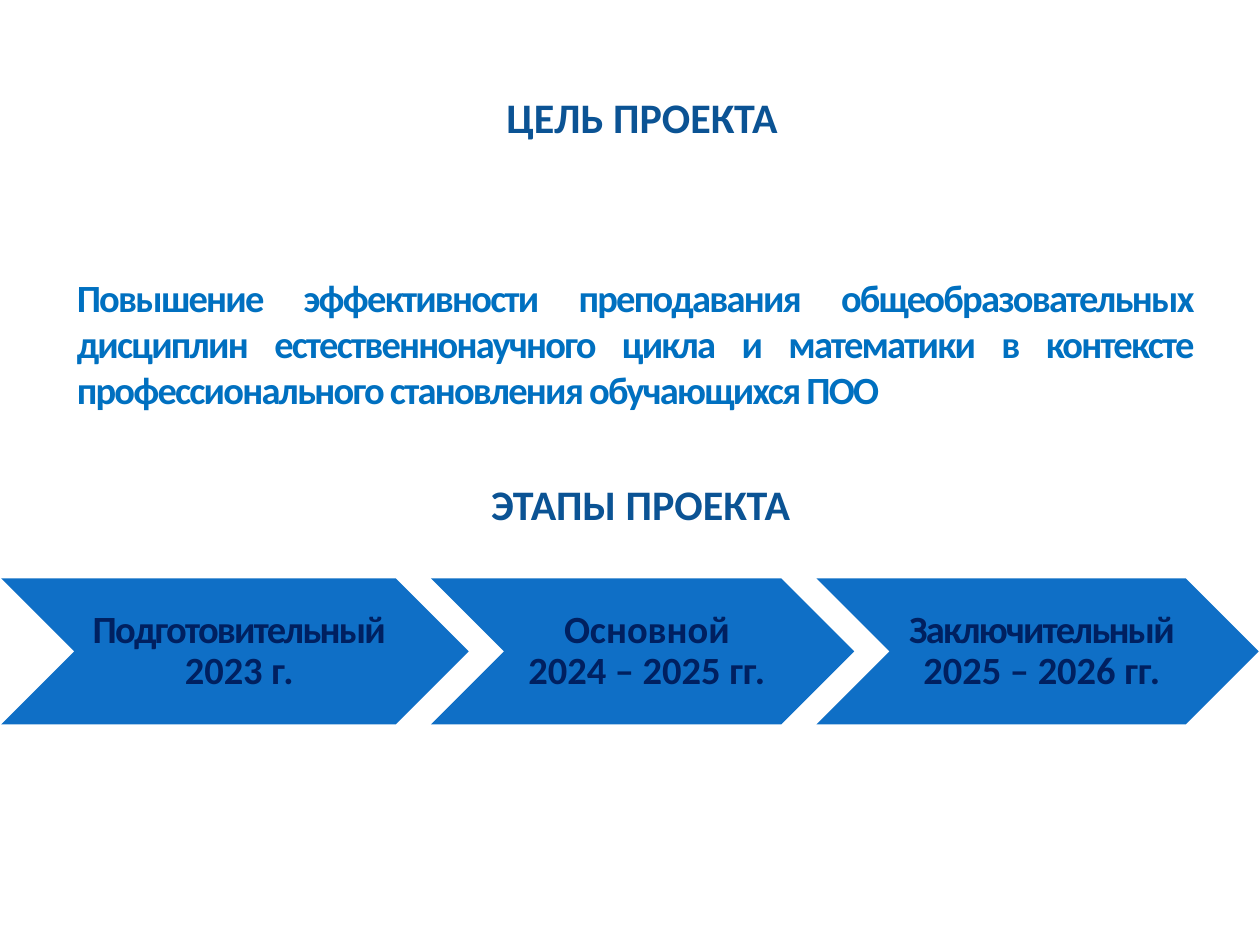
from dataclasses import dataclass

from pptx import Presentation
from pptx.dml.color import RGBColor
from pptx.enum.shapes import MSO_SHAPE
from pptx.enum.text import MSO_ANCHOR, MSO_AUTO_SIZE, PP_ALIGN
from pptx.util import Inches, Pt

CHEVRON = MSO_SHAPE.CHEVRON
MIDDLE = MSO_ANCHOR.MIDDLE
NO_FIT = MSO_AUTO_SIZE.NONE
CENTER, JUSTIFY = PP_ALIGN.CENTER, PP_ALIGN.JUSTIFY

HEADING_BLUE = RGBColor(0x0B, 0x53, 0x94)
GOAL_BLUE = RGBColor(0x00, 0x70, 0xC0)
STAGE_BLUE = RGBColor(0x0F, 0x6F, 0xC6)
NAVY = RGBColor(0x00, 0x20, 0x60)

FONT = "Calibri"
TIGHT = -100  # character spacing, hundredths of a point
STAGE_LEFT, STAGE_TOP, STAGE_HEIGHT = 0.01, 4.59, 1.16
STAGE_OVERLAP = 0.3


@dataclass
class Heading:
    text: str
    left: float
    top: float
    width: float


@dataclass
class Stage:
    name: str
    years: str
    width: float
    spacing: int = 0


HEADINGS = [
    Heading("ЦЕЛЬ ПРОЕКТА", 3.82, 0.68, 2.55),
    Heading("ЭТАПЫ ПРОЕКТА", 3.47, 3.75, 3.23),
]
STAGES = [
    Stage("Подготовительный", "2023 г.", 3.71, TIGHT),
    Stage("Основной", "2024 – 2025 гг.", 3.36),
    Stage("Заключительный", "2025 – 2026 гг.", 3.51, TIGHT),
]
GOAL = (
    "Повышение эффективности преподавания общеобразовательных дисциплин "
    "естественнонаучного цикла и математики в контексте "
    "профессионального становления обучающихся ПОО"
)


def add_run(paragraph, text: str, size: int, color: RGBColor, spacing: int = 0) -> None:
    run = paragraph.add_run()
    run.text = text
    run.font.name = FONT
    run.font.size = Pt(size)
    run.font.bold = True
    run.font.color.rgb = color
    if spacing:
        run.font._element.set("spc", str(spacing))


def add_heading(slide, heading: Heading) -> None:
    box = slide.shapes.add_textbox(
        Inches(heading.left), Inches(heading.top), Inches(heading.width), Inches(0.5))
    box.text_frame.word_wrap = True
    paragraph = box.text_frame.paragraphs[0]
    paragraph.alignment = CENTER
    add_run(paragraph, heading.text, 24, HEADING_BLUE)


def add_stage(slide, stage: Stage, left: float) -> None:
    arrow = slide.shapes.add_shape(
        CHEVRON, Inches(left), Inches(STAGE_TOP), Inches(stage.width), Inches(STAGE_HEIGHT))
    arrow.shadow.inherit = False
    arrow.fill.solid()
    arrow.fill.fore_color.rgb = STAGE_BLUE
    arrow.line.fill.background()

    frame = arrow.text_frame
    frame.word_wrap = True
    frame.vertical_anchor = MIDDLE
    frame.margin_left = Inches(0.1)
    frame.margin_top = frame.margin_right = frame.margin_bottom = Inches(0.03)
    paragraph = frame.paragraphs[0]
    paragraph.alignment = CENTER
    paragraph.line_spacing = 0.9
    add_run(paragraph, stage.name, 22, NAVY, stage.spacing)
    paragraph.add_line_break()
    add_run(paragraph, stage.years, 22, NAVY)


def main() -> None:
    deck = Presentation()
    deck.slide_width, deck.slide_height = Inches(10), Inches(7.5)
    slide = deck.slides.add_slide(deck.slide_layouts[5])

    # Project goal in the title placeholder
    goal = slide.shapes.title
    goal.left, goal.top = Inches(0.51), Inches(2.12)
    goal.width, goal.height = Inches(9.06), Inches(1.21)
    goal.text_frame.word_wrap = True
    goal.text_frame.auto_size = NO_FIT
    goal.text_frame.vertical_anchor = MIDDLE
    paragraph = goal.text_frame.paragraphs[0]
    paragraph.alignment = JUSTIFY
    add_run(paragraph, GOAL, 22, GOAL_BLUE, TIGHT)

    # Section headings
    for heading in HEADINGS:
        add_heading(slide, heading)

    # Row of overlapping stage arrows
    left = STAGE_LEFT
    for stage in STAGES:
        add_stage(slide, stage, left)
        left += stage.width - STAGE_OVERLAP

    deck.save("out.pptx")


if __name__ == "__main__":
    main()
